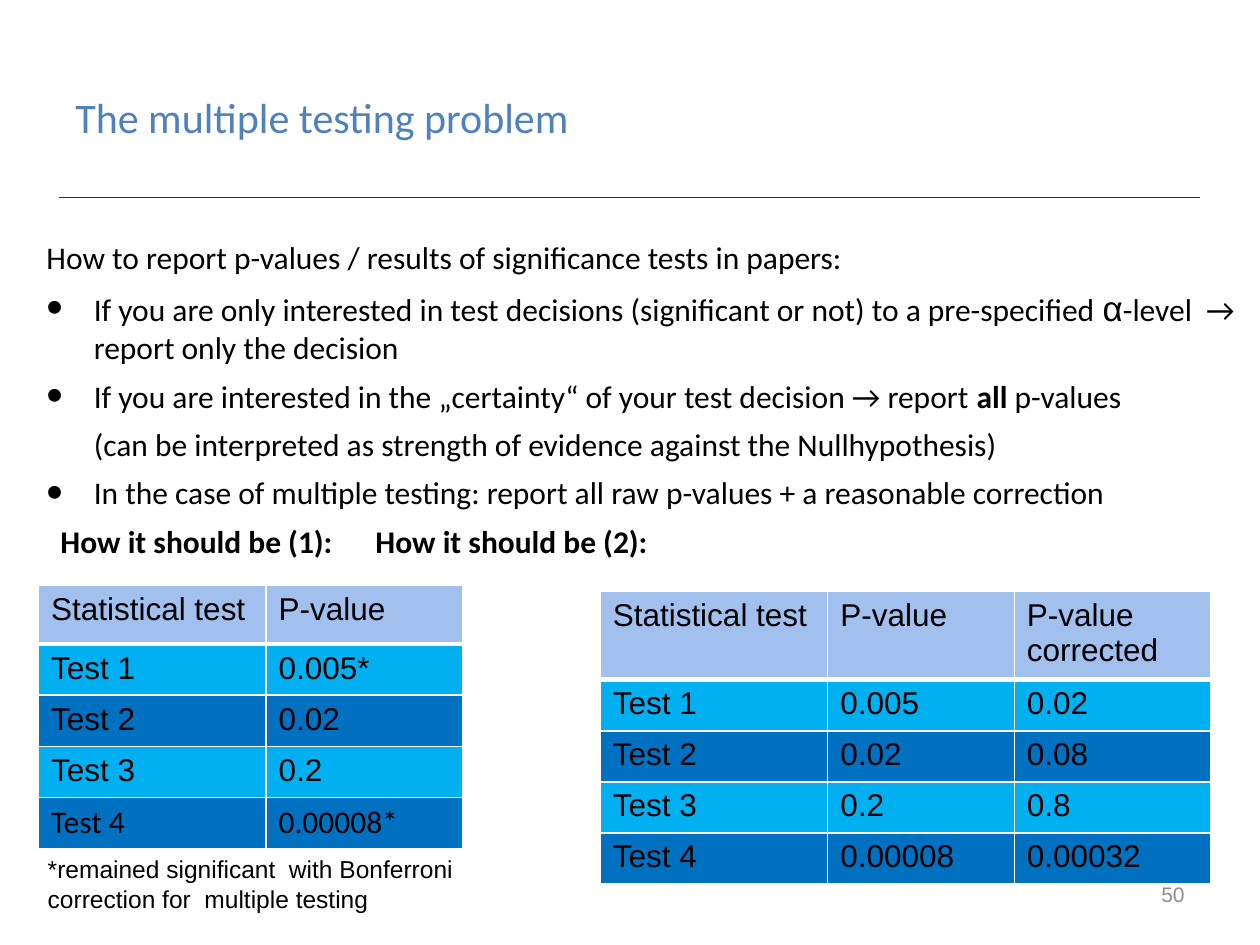
"""Builds a slide on reporting p-values under multiple testing."""
from lxml.etree import SubElement
from pptx import Presentation
from pptx.dml.color import RGBColor
from pptx.enum.shapes import MSO_CONNECTOR as Connector
from pptx.enum.text import MSO_ANCHOR as Anchor, PP_ALIGN as Align
from pptx.oxml.ns import qn
from pptx.util import Pt

COLORS = {
    "title": "4F81BD", "text": "000000", "number": "8C8C8C", "rule": "AC0000",
    "header": "A1C0EE", "odd": "00B0F0", "even": "0070C0", "border": "FFFFFF",
}
INDENT = 27
BODY = {"name": "Calibri", "size": Pt(18), "bold": False}
BOLD = {**BODY, "bold": True}
ALPHA = {**BODY, "name": "Arial", "size": Pt(20)}
CELL = {**BODY, "name": "Arial"}
TITLE = {**BODY, "size": Pt(24)}
NUMBER = {**CELL, "size": Pt(12)}
FOOTNOTE = {**CELL, "size": Pt(14)}

HANGING = {"marL": INDENT, "indent": -INDENT}
CONTINUED = {"marL": INDENT, "indent": 0}
HEADINGS = {"marL": 8, "indent": 0}
PARAGRAPHS = [
    (HANGING, None, None, [("How to report p-values / results of significance tests in papers:", BODY)]),
    (HANGING, "•", None, [
        ("If you are only interested in test decisions (significant or not) to a pre-specified ", BODY),
        ("α", ALPHA),
        ("-level  → report only the decision", BODY)]),
    (HANGING, "•", None, [
        ("If you are interested in the „certainty“ of your test decision → report ", BODY),
        ("all", BOLD),
        (" p-values", BODY)]),
    (CONTINUED, None, None, [
        ("(can be interpreted as strength of evidence against the Nullhypothesis)", BODY)]),
    (HANGING, "•", None, [
        ("In the case of multiple testing: report all raw p-values + a reasonable correction", BODY)]),
    (HEADINGS, None, 273, [("How it should be (1):\tHow it should be (2):", BOLD)]),
]
MARKED_ROWS = [
    ["Statistical test", "P-value"],
    ["Test 1", "0.005*"],
    ["Test 2", "0.02"],
    ["Test 3", "0.2"],
    ["Test 4", "0.00008*"],
]
CORRECTED_ROWS = [
    ["Statistical test", "P-value", "P-value corrected"],
    ["Test 1", "0.005", "0.02"],
    ["Test 2", "0.02", "0.08"],
    ["Test 3", "0.2", "0.8"],
    ["Test 4", "0.00008", "0.00032"],
]


def color(name):
    """Return the named colour."""
    return RGBColor.from_string(COLORS[name])


def apply_format(target, values):
    """Set each attribute of the target from a dict."""
    for name, value in values.items():
        setattr(target, name, value)


def add_run(paragraph, text, font, ink="text"):
    """Add a formatted run to a paragraph."""
    run = paragraph.add_run()
    run.text = text
    apply_format(run.font, font)
    run.font.color.rgb = color(ink)


def add_box(slide, box, anchor=Anchor.TOP):
    """Add a wrapping text box and return its text frame."""
    frame = slide.shapes.add_textbox(*map(Pt, box)).text_frame
    apply_format(frame, {"word_wrap": True, "vertical_anchor": anchor})
    return frame


def add_label(slide, box, text, font, ink="text", anchor=Anchor.TOP, align=Align.LEFT):
    """Add a text box with a single paragraph."""
    paragraph = add_box(slide, box, anchor).paragraphs[0]
    paragraph.alignment = align
    add_run(paragraph, text, font, ink)


def add_rule(slide, left, right, top):
    """Add the thin line below the title."""
    rule = slide.shapes.add_connector(Connector.STRAIGHT, Pt(left), Pt(top), Pt(right), Pt(top))
    rule.line.width = Pt(0.25)
    rule.line.color.rgb = color("rule")
    SubElement(rule._element.spPr, qn("a:effectLst"))


def style_paragraph(paragraph, indents, bullet, tab):
    """Set the indents, bullet and tab stop of a paragraph."""
    properties = paragraph._p.get_or_add_pPr()
    for name, value in indents.items():
        properties.set(name, str(Pt(value)))
    if bullet:
        SubElement(properties, qn("a:buSzPct"), val="150000")
        SubElement(properties, qn("a:buFont"), typeface="Arial")
        SubElement(properties, qn("a:buChar"), char=bullet)
    else:
        SubElement(properties, qn("a:buNone"))
    if tab:
        tabs = SubElement(properties, qn("a:tabLst"))
        SubElement(tabs, qn("a:tab"), pos=str(Pt(tab)), algn="l")


def add_body(slide, box):
    """Add the advice on reporting p-values."""
    frame = add_box(slide, box)
    for index, (indents, bullet, tab, runs) in enumerate(PARAGRAPHS):
        paragraph = frame.add_paragraph() if index else frame.paragraphs[0]
        style_paragraph(paragraph, indents, bullet, tab)
        paragraph.space_before = Pt(6 if index else 0)
        for text, font in runs:
            add_run(paragraph, text, font)


def add_borders(cell, widths):
    """Draw the left, right, top and bottom borders of a cell."""
    properties = cell._tc.get_or_add_tcPr()
    for side, width in zip("LRTB", widths):
        line = SubElement(properties, qn(f"a:ln{side}"), w=str(Pt(width)))
        fill = SubElement(line, qn("a:solidFill"))
        SubElement(fill, qn("a:srgbClr"), val=COLORS["border"])


def add_results(slide, left, top, widths, header_height, rows, last_font=CELL):
    """Add a table of test results with alternating row fills."""
    row_height = 29.2
    heights = [header_height] + [row_height] * (len(rows) - 1)
    box = (left, top, sum(widths), sum(heights))
    table = slide.shapes.add_table(len(rows), len(widths), *map(Pt, box)).table
    for column, width in zip(table.columns, widths):
        column.width = Pt(width)
    for index, (values, height) in enumerate(zip(rows, heights)):
        table.rows[index].height = Pt(height)
        shade = "header" if index == 0 else "odd" if index % 2 else "even"
        font = last_font if index == len(rows) - 1 else CELL
        for position, value in enumerate(values):
            cell = table.cell(index, position)
            add_borders(cell, (1, 1, 3 if index == 1 else 1, 3 if index == 0 else 1))
            cell.fill.solid()
            cell.fill.fore_color.rgb = color(shade)
            add_run(cell.text_frame.paragraphs[0], value, font)


def main():
    """Build and save the slide."""
    presentation = Presentation()
    apply_format(presentation, {"slide_width": Pt(720), "slide_height": Pt(540)})
    slide = presentation.slides.add_slide(presentation.slide_layouts[6])
    add_rule(slide, 34, 686, 112.5)
    add_label(slide, (516, 492, 168, 37.5), "50", NUMBER, "number", Anchor.MIDDLE, Align.RIGHT)
    add_label(slide, (36, 21.6, 487.5, 90), "The multiple testing problem", TITLE, "title", Anchor.MIDDLE)
    add_body(slide, (19.5, 132.5, 697.5, 468))
    add_results(slide, 22, 334.4, (130, 112.3), 33.7, MARKED_ROWS, BODY)
    add_label(slide, (20.2, 484.6, 280, 41),
              "*remained significant  with Bonferroni  correction for  multiple testing", FOOTNOTE)
    add_results(slide, 343, 338, (130, 106.6, 112.3), 50.4, CORRECTED_ROWS)
    presentation.save("out.pptx")


if __name__ == "__main__":
    main()
